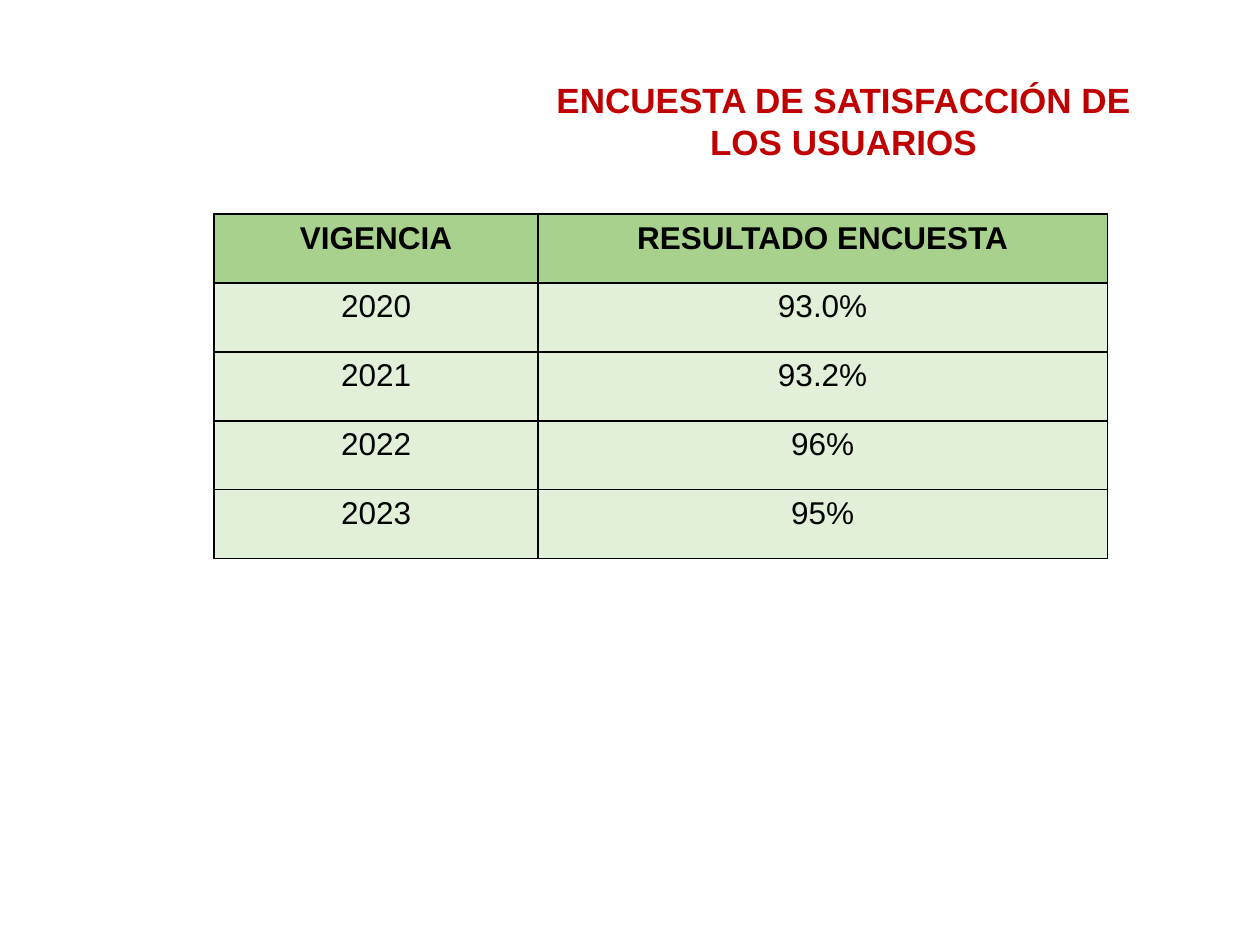
import pptx
import pptx.dml.color
import pptx.enum.text
import pptx.oxml
import pptx.oxml.ns
import pptx.util

Pt = pptx.util.Pt
RGBColor = pptx.dml.color.RGBColor
CENTER = pptx.enum.text.PP_ALIGN.CENTER

RED = RGBColor(0xC0, 0x00, 0x00)
BLACK = RGBColor(0x00, 0x00, 0x00)
WHITE = RGBColor(0xFF, 0xFF, 0xFF)
HEADER_GREEN = RGBColor(0xA9, 0xD1, 0x8E)
BODY_GREEN = RGBColor(0xE2, 0xF0, 0xD9)


class SurveySlide:
    """Holds the style and the current slide."""

    font_name = "Arial"
    title_size = 20
    cell_size = 18
    border_width = 1

    def __init__(self, deck):
        self.page = deck.slides.add_slide(deck.slide_layouts[5])

    def format_text(self, para, size, color, bold):
        para.alignment = CENTER
        para.font.name = self.font_name
        para.font.size = Pt(size)
        para.font.bold = bold
        para.font.color.rgb = color

    def add_title(self, text, left, top, width, height):
        box = self.page.shapes.title
        box.left, box.top = Pt(left), Pt(top)
        box.width, box.height = Pt(width), Pt(height)
        box.fill.solid()
        box.fill.fore_color.rgb = WHITE
        frame = box.text_frame
        frame.text = text
        frame.word_wrap = True
        frame.auto_size = pptx.enum.text.MSO_AUTO_SIZE.SHAPE_TO_FIT_TEXT
        frame.vertical_anchor = pptx.enum.text.MSO_ANCHOR.MIDDLE
        self.format_text(frame.paragraphs[0], self.title_size, RED, True)

    def add_borders(self, cell):
        properties = cell._tc.get_or_add_tcPr()
        for index, side in enumerate(("lnL", "lnR", "lnT", "lnB")):
            line = pptx.oxml.parse_xml(
                f'<a:{side} {pptx.oxml.ns.nsdecls("a")} w="{Pt(self.border_width)}">'
                f'<a:solidFill><a:srgbClr val="{BLACK}"/></a:solidFill></a:{side}>'
            )
            properties.insert(index, line)

    def add_table(self, rows, left, top, column_widths, row_height):
        frame = self.page.shapes.add_table(
            len(rows), len(column_widths), Pt(left), Pt(top),
            Pt(sum(column_widths)), Pt(row_height * len(rows)),
        )
        table = frame.table
        table.horz_banding = False
        for column, width in zip(table.columns, column_widths):
            column.width = Pt(width)
        for row_index, values in enumerate(rows):
            is_header = row_index == 0
            table.rows[row_index].height = Pt(row_height)
            for column_index, value in enumerate(values):
                cell = table.cell(row_index, column_index)
                cell.text = value
                cell.fill.solid()
                cell.fill.fore_color.rgb = HEADER_GREEN if is_header else BODY_GREEN
                self.format_text(cell.text_frame.paragraphs[0], self.cell_size, BLACK, is_header)
                self.add_borders(cell)


def main():
    deck = pptx.Presentation()
    deck.slide_width, deck.slide_height = Pt(720), Pt(540)
    slide = SurveySlide(deck)

    # Title
    slide.add_title("ENCUESTA DE SATISFACCIÓN DE LOS USUARIOS", 292.3, 41, 379.4, 55.7)

    # Survey results by year
    results = [
        ("VIGENCIA", "RESULTADO ENCUESTA"),
        ("2020", "93.0%"),
        ("2021", "93.2%"),
        ("2022", "96%"),
        ("2023", "95%"),
    ]
    slide.add_table(results, 122.4, 122.4, (185, 325.4), 39.35)

    deck.save("out.pptx")


if __name__ == "__main__":
    main()
